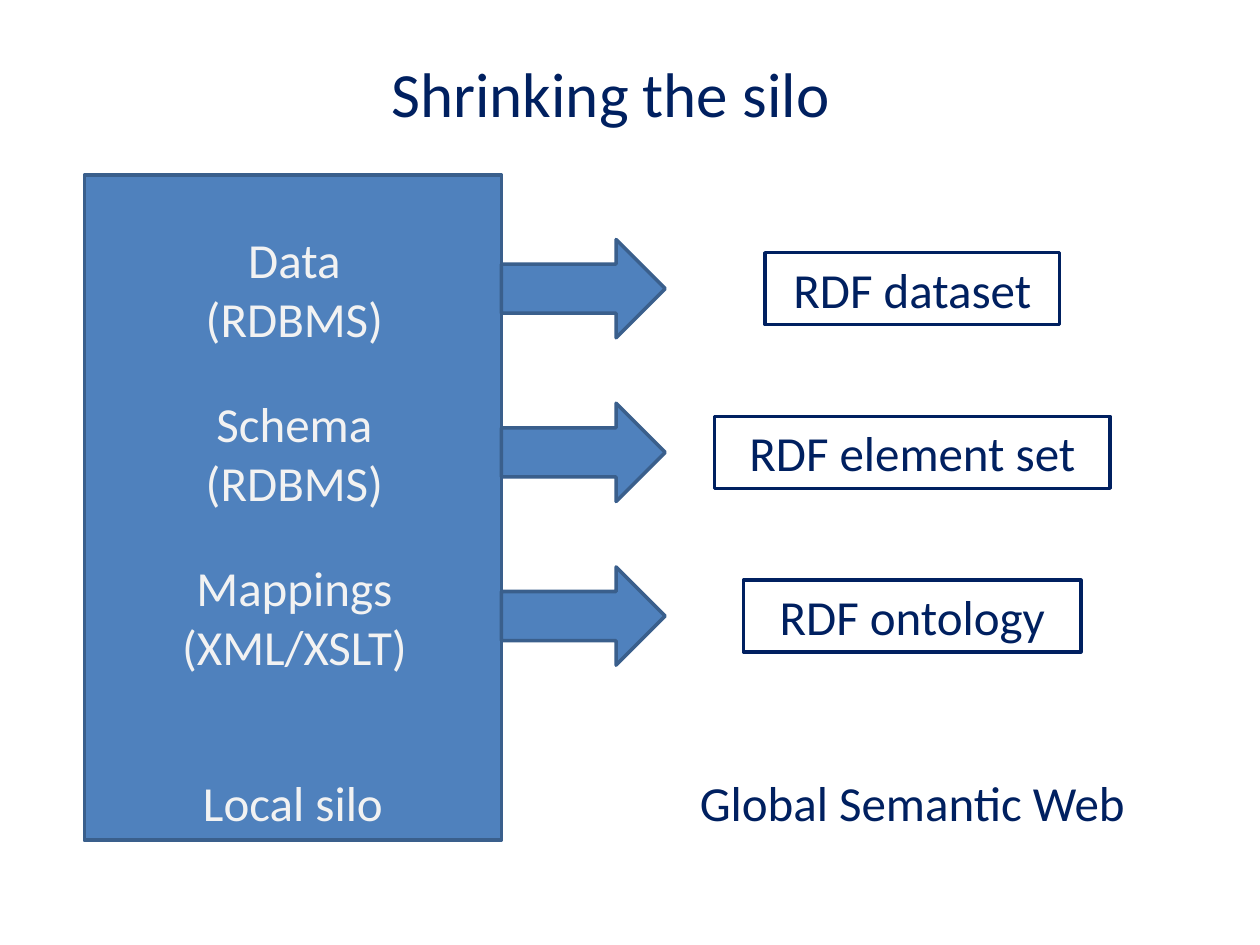
from pptx import Presentation
from pptx.dml.color import RGBColor
from pptx.enum.shapes import MSO_SHAPE as Shape
from pptx.enum.text import MSO_ANCHOR as Anchor, MSO_AUTO_SIZE as AutoSize, PP_ALIGN as Align
from pptx.util import Cm, Pt

# Content
TITLE = "Shrinking the silo"
# Label lines, label width, target text, target width (cm)
ROWS = [
    (["Data", "(RDBMS)"], 4.4, "RDF dataset", 5.94),
    (["Schema", "(RDBMS)"], 4.4, "RDF element set", 7.98),
    (["Mappings", "(XML/XSLT)"], 5.38, "RDF ontology", 6.8),
]
SILO_CAPTION = "Local silo"
WEB_CAPTION = "Global Semantic Web"

COLORS = {"navy": "002060", "blue": "4F81BD", "edge": "3A5F8C", "pale": "F2F2F2"}
FONT = "Calibri"

# Layout (cm)
SILO_LEFT, SILO_TOP, SILO_WIDTH, SILO_HEIGHT = 1.7, 3.53, 8.41, 13.41
SILO_RIGHT = SILO_LEFT + SILO_WIDTH
SILO_CENTER = SILO_LEFT + SILO_WIDTH / 2
WEB_CENTER = 18.39
FIRST_ROW, ROW_PITCH = 5.82, 3.3
CAPTION_MIDDLE = 16.17
ARROW_WIDTH, ARROW_HEIGHT = 3.3, 1.98
LINE_HEIGHT, LABEL_HEIGHT = 1.45, 2.64


def color(name):
    return RGBColor.from_string(COLORS[name])


def add_block(kind, left, top, width, height):
    block = page.shapes.add_shape(kind, Cm(left), Cm(top), Cm(width), Cm(height))
    block.shadow.inherit = False
    block.fill.solid()
    block.fill.fore_color.rgb = color("blue")
    block.line.color.rgb = color("edge")
    block.line.width = Pt(2)


def add_text(lines, center, middle, width, height, ink, size=28):
    box = page.shapes.add_textbox(
        Cm(center - width / 2), Cm(middle - height / 2), Cm(width), Cm(height))
    frame = box.text_frame
    frame.word_wrap = True
    frame.auto_size = AutoSize.SHAPE_TO_FIT_TEXT
    frame.vertical_anchor = Anchor.MIDDLE
    for index, line in enumerate(lines):
        para = frame.add_paragraph() if index else frame.paragraphs[0]
        para.alignment = Align.CENTER
        span = para.add_run()
        span.text = line
        span.font.name = FONT
        span.font.size = Pt(size)
        span.font.color.rgb = color(ink)
    return box


deck = Presentation()
deck.slide_width, deck.slide_height = Cm(25.4), Cm(19.05)
page = deck.slides.add_slide(deck.slide_layouts[6])

# Title and silo
add_text([TITLE], 12.31, 1.87, 11.2, 1.8, "navy", 36)
add_block(Shape.RECTANGLE, SILO_LEFT, SILO_TOP, SILO_WIDTH, SILO_HEIGHT)

# Rows: silo label, arrow, framed target
for number, (label, label_width, target, target_width) in enumerate(ROWS):
    middle = FIRST_ROW + number * ROW_PITCH
    add_text(label, SILO_CENTER + 0.03, middle, label_width, LABEL_HEIGHT, "pale")
    add_block(Shape.RIGHT_ARROW, SILO_RIGHT, middle - ARROW_HEIGHT / 2,
              ARROW_WIDTH, ARROW_HEIGHT)
    frame_box = add_text([target], WEB_CENTER, middle, target_width, LINE_HEIGHT, "navy")
    frame_box.line.color.rgb = color("navy")
    frame_box.line.width = Pt(2)

# Captions
add_text([SILO_CAPTION], SILO_CENTER, CAPTION_MIDDLE, 4.5, LINE_HEIGHT, "pale")
add_text([WEB_CAPTION], WEB_CENTER, CAPTION_MIDDLE, 9.8, LINE_HEIGHT, "navy")

deck.save("out.pptx")
